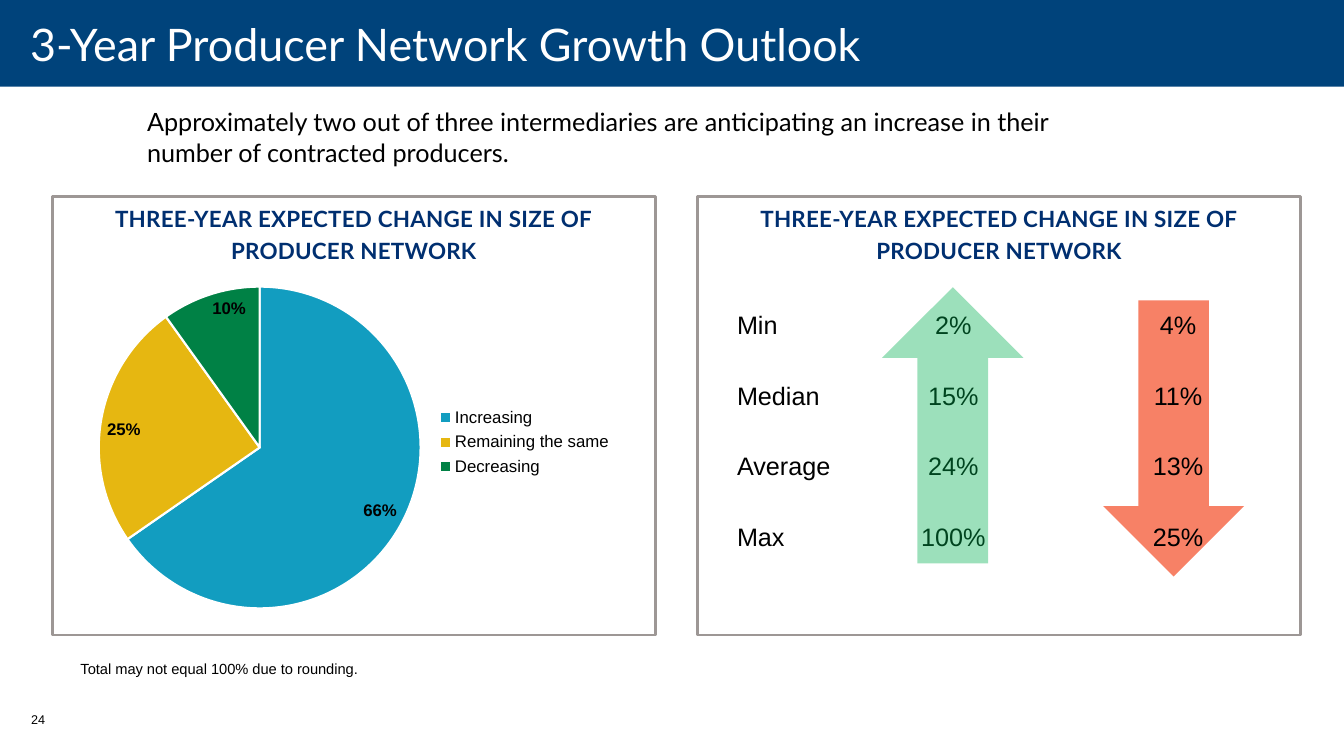
from lxml import etree
from pptx import Presentation
from pptx.chart.data import CategoryChartData
from pptx.dml.color import RGBColor
from pptx.enum.chart import XL_CHART_TYPE as Chart
from pptx.enum.chart import XL_LABEL_POSITION as Spot
from pptx.enum.chart import XL_LEGEND_POSITION as Side
from pptx.enum.shapes import MSO_SHAPE as Shape
from pptx.enum.text import MSO_ANCHOR as Anchor
from pptx.enum.text import PP_ALIGN as Align
from pptx.oxml.ns import qn
from pptx.util import Inches, Pt

HEAD = "THREE-YEAR EXPECTED CHANGE IN SIZE OF PRODUCER NETWORK"
SLICES = [("Increasing", 0.66, "129DC0"),
          ("Remaining the same", 0.25, "E6B711"),
          ("Decreasing", 0.1, "008145")]
ROWS = [("Min", "2%", "4%"), ("Median", "15%", "11%"),
        ("Average", "24%", "13%"), ("Max", "100%", "25%")]
NO_GRID = "{2D5ABB26-0587-4C30-8999-92F81FD0307C}"


def color(code):
    return RGBColor.from_string(code)


def place(box):
    return [Inches(n) for n in box]


def style(font, size, name="Arial", code="000000", bold=False):
    font.size, font.name, font.bold = Pt(size), name, bold
    font.color.rgb = color(code)


def draw(slide, kind, box, fill=None, line=None, alpha=None):
    """Add a preset shape; alpha is the opacity in percent."""
    shape = slide.shapes.add_shape(kind, *place(box))
    shape.shadow.inherit = False
    if fill:
        shape.fill.solid()
        shape.fill.fore_color.rgb = color(fill)
    else:
        shape.fill.background()
    if line:
        shape.line.color.rgb = color(line)
        shape.line.width = Pt(2)
    else:
        shape.line.fill.background()
    if alpha:
        tone = shape.element.spPr.find(".//" + qn("a:srgbClr"))
        etree.SubElement(tone, qn("a:alpha")).set("val", str(alpha * 1000))
    return shape


def write(slide, box, text, size, **look):
    frame = slide.shapes.add_textbox(*place(box)).text_frame
    frame.word_wrap = True
    para = frame.paragraphs[0]
    para.text = text
    style(para.font, size, **look)
    return frame


def banner(slide, text):
    draw(slide, Shape.RECTANGLE, (0, 0, 13.33, 0.86), fill="00437B")
    title = slide.shapes.title
    title.element.getparent().append(title.element)  # above the band
    title.left, title.top, title.width, title.height = place(
        (0, -0.05, 13.33, 0.97))
    frame = title.text_frame
    frame.text = text
    frame.vertical_anchor = Anchor.MIDDLE
    frame.margin_left, frame.margin_right = Inches(0.3), Inches(0.2)
    frame.margin_top = frame.margin_bottom = 0
    para = frame.paragraphs[0]
    para.alignment = Align.LEFT
    style(para.font, 32, "Lato", "FFFFFF")


def panel(slide, left, top):
    draw(slide, Shape.RECTANGLE, (left, top, 5.98, 4.35), line="9D9795")
    frame = write(slide, (left, top + 0.13, 5.98, 0.44), HEAD, 16,
                  name="Lato", code="002F70", bold=True)
    frame.vertical_anchor = Anchor.MIDDLE
    para = frame.paragraphs[0]
    para.alignment = Align.CENTER
    para.line_spacing = 1.2
    para.space_after = Pt(12.6)
    para.runs[0].font._element.set("spc", "20")


def layout(parent, index, box, inner=False):
    """Fix a chart region at fractions of the chart's size."""
    for old in parent.findall(qn("c:layout")):
        parent.remove(old)
    outer = etree.Element(qn("c:layout"))
    parent.insert(index, outer)
    manual = etree.SubElement(outer, qn("c:manualLayout"))
    pairs = [("layoutTarget", "inner")] if inner else []
    pairs += [("xMode", "edge"), ("yMode", "edge")]
    pairs += zip("xywh", box)
    for tag, val in pairs:
        etree.SubElement(manual, qn("c:" + tag)).set("val", str(val))


def pie(slide, left, top):
    names, vals, codes = zip(*SLICES)
    data = CategoryChartData(number_format="0%")
    data.categories = names
    data.add_series("Series 1", vals)
    box = place((left, top, 5.6, 3.48))
    chart = slide.shapes.add_chart(Chart.PIE, *box, data).chart
    chart.has_title = False
    style(chart.font, 10)
    chart.has_legend = True
    chart.legend.position = Side.RIGHT
    chart.legend.include_in_layout = False
    style(chart.legend.font, 12)
    plot = chart.plots[0]
    plot.vary_by_categories = True
    series = plot.series[0]
    for i, code in enumerate(codes):
        form = series.points[i].format
        form.fill.solid()
        form.fill.fore_color.rgb = color(code)
        form.line.color.rgb = color("FFFFFF")
        form.line.width = Pt(1.5)
    labels = series.data_labels
    labels.show_value = True
    labels.number_format, labels.number_format_is_linked = "0%", False
    labels.position = Spot.INSIDE_END
    style(labels.font, 12, bold=True)
    root = chart.element
    layout(root.find(".//" + qn("c:plotArea")), 0,
           (0.05, 0.04, 0.57, 0.92), inner=True)
    layout(root.find(".//" + qn("c:legend")), 1, (0.64, 0.37, 0.33, 0.23))


def grid(slide, left, top):
    box = place((left, top, 5.6, 2.8))
    table = slide.shapes.add_table(len(ROWS), 3, *box).table
    table.first_row = table.horz_banding = False
    table._tbl.find(".//" + qn("a:tableStyleId")).text = NO_GRID
    for col, width in zip(table.columns, (1.14, 2.03, 2.43)):
        col.width = Inches(width)
    for r, row in enumerate(ROWS):
        for c, text in enumerate(row):
            cell = table.cell(r, c)
            cell.text = text
            cell.fill.background()
            cell.vertical_anchor = Anchor.MIDDLE
            cell.margin_left = cell.margin_right = Inches(0.01)
            cell.margin_top, cell.margin_bottom = Inches(0.01), 0
            para = cell.text_frame.paragraphs[0]
            para.alignment = Align.CENTER if c else Align.LEFT
            style(para.font, 18)


def ranges(slide, left, top):
    """Place the table of figures between its two arrows."""
    down = draw(slide, Shape.UP_ARROW, (left + 3.64, top + 0.1, 1.4, 2.74),
                fill="F22E00", alpha=60)
    down.rotation = 180
    grid(slide, left, top)
    draw(slide, Shape.UP_ARROW, (left + 1.45, top - 0.03, 1.4, 2.74),
         fill="00B050", alpha=39)


def main():
    deck = Presentation()
    deck.slide_width, deck.slide_height = Inches(13.33), Inches(7.5)
    slide = deck.slides.add_slide(deck.slide_layouts[5])
    banner(slide, "3-Year Producer Network Growth Outlook")
    write(slide, (1.36, 1.01, 9.99, 0.71),
          "Approximately two out of three intermediaries are anticipating "
          "an increase in their number of contracted producers.",
          18, name="Lato")
    for left in (0.52, 6.92):
        panel(slide, left, 1.95)
    pie(slide, 0.7, 2.7)
    ranges(slide, 7.3, 2.88)
    write(slide, (0.7, 6.5, 3.14, 0.28),
          "Total may not equal 100% due to rounding.", 10.5)
    write(slide, (0.21, 7.01, 0.49, 0.4), "24", 9)
    deck.save("out.pptx")


if __name__ == "__main__":
    main()
